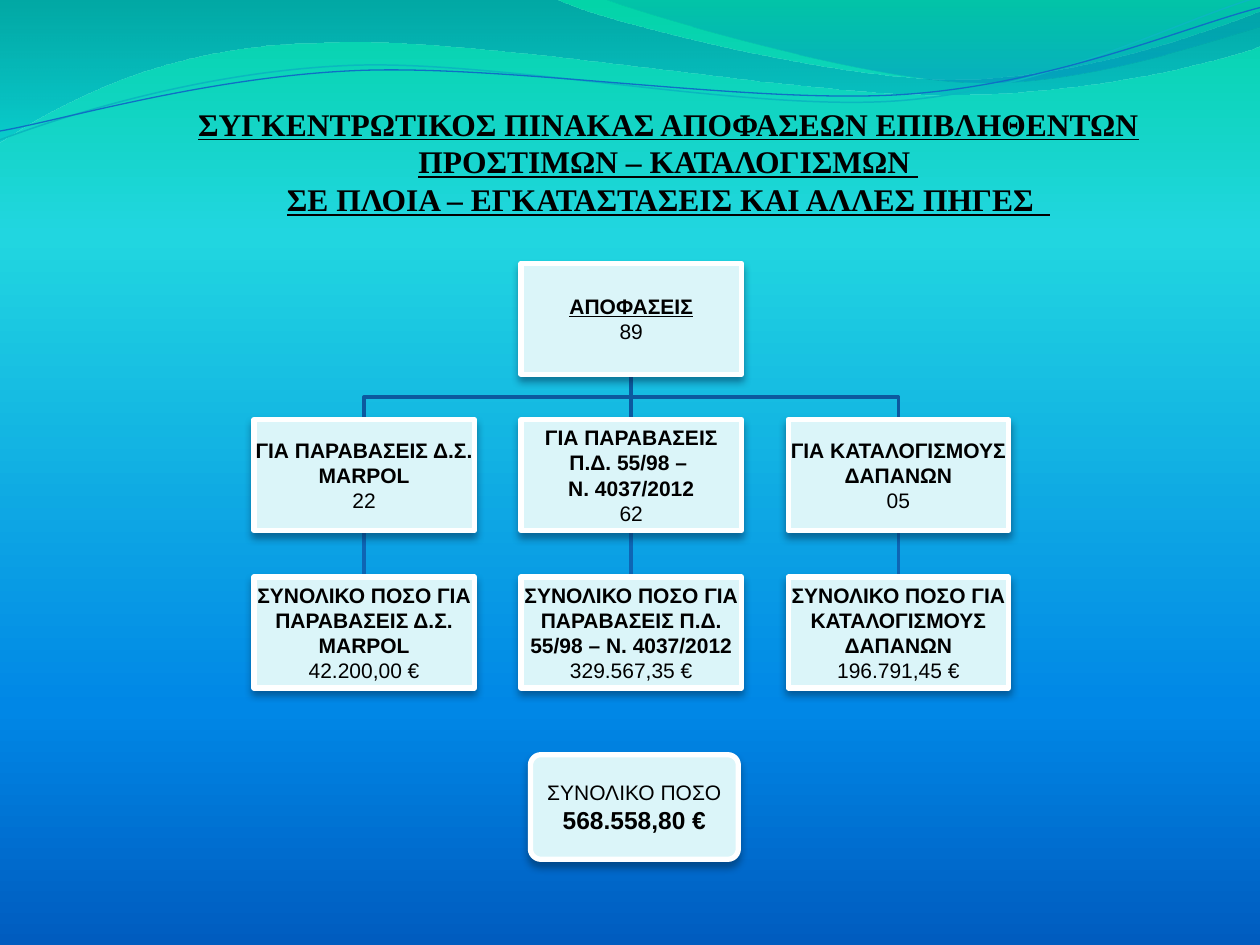
import math

from lxml import etree
from pptx import Presentation
from pptx.dml.color import RGBColor
from pptx.enum import shapes, text
from pptx.oxml.ns import qn
from pptx.util import Inches, Pt

BLACK = RGBColor(0x00, 0x00, 0x00)
WHITE = RGBColor(0xFF, 0xFF, 0xFF)
PALE = RGBColor(0xDB, 0xF5, 0xF9)
SHADOW = RGBColor(0x04, 0x27, 0x47)
BRANCH = RGBColor(0x0C, 0x59, 0x9F)
STEM = RGBColor(0x0E, 0x65, 0xB4)
TEAL = RGBColor(0x0A, 0xB8, 0xBF)
BLUE = RGBColor(0x0F, 0x6F, 0xC6)

# Gradient stops: position %, colour, opacity %
SKY = [(0, RGBColor(0x03, 0xD4, 0xA8), 100), (25, RGBColor(0x21, 0xD6, 0xE0), 100),
       (75, RGBColor(0x00, 0x87, 0xE6), 100), (100, RGBColor(0x00, 0x5C, 0xBF), 100)]
WIDE_FILL = [(0, RGBColor(0x00, 0x74, 0xA1), 45), (100, RGBColor(0x00, 0xC6, 0xCF), 55)]
CORNER_FILL = [(0, RGBColor(0x00, 0xA1, 0xA9), 30), (80, RGBColor(0x00, 0x8B, 0xBF), 45)]

# Outlines: a start point, then lines (x, y) or cubic curves (six numbers)
WIDE_BOX = (-0.01, -0.01, 10.02, 1.14)
WIDE_WAVE = [(0, -0.01), (4.4, -0.01), (4.76, 0.17, 6.64, 0.63, 7.58, 0.63),
             (8.53, 0.63, 9.58, 0.26, 10, 0.09), (10.01, 0.36),
             (9.83, 0.44, 8.7, 0.76, 7.46, 0.75), (6.22, 0.75, 3.82, 0.28, 2.57, 0.34),
             (1.29, 0.35, 0.46, 0.83, -0.01, 1.13), (0, -0.01)]
CORNER_BOX = (4.79, -0.01, 5.21, 0.7)
CORNER_WAVE = [(4.79, -0.01), (5.09, 0.11, 6.82, 0.62, 7.69, 0.65),
               (8.56, 0.69, 9.61, 0.32, 10, 0.21), (10, 0), (4.79, -0.01)]
TEAL_BOX = (-0.02, 0.22, 10.02, 0.71)
TEAL_LINE = [(0, 1.11), (0.48, 0.93, 1.58, 0.57, 2.77, 0.52),
             (3.95, 0.47, 5.93, 0.89, 7.13, 0.8), (8.33, 0.71, 9.38, 0.15, 9.98, -0.02)]
BLUE_BOX = (-0.02, 0.3, 10.03, 0.58)
BLUE_LINE = [(0, 1.04), (0.47, 0.96, 1.64, 0.61, 2.83, 0.56),
             (4.03, 0.51, 5.97, 0.83, 7.17, 0.75), (8.36, 0.67, 9.41, 0.21, 10, 0.06)]
TILT = 357.3

# Organisation chart grid
BOX_W, BOX_H = 1.75, 0.88
MID_X, COL_STEP = 5.01, 2.12
ROOT_Y, CHILD_Y, AMOUNT_Y = 2.09, 3.33, 4.58

TITLE = ("ΣΥΓΚΕΝΤΡΩΤΙΚΟΣ ΠΙΝΑΚΑΣ ΑΠΟΦΑΣΕΩΝ ΕΠΙΒΛΗΘΕΝΤΩΝ ΠΡΟΣΤΙΜΩΝ – ΚΑΤΑΛΟΓΙΣΜΩΝ \v"
         "ΣΕ ΠΛΟΙΑ – ΕΓΚΑΤΑΣΤΑΣΕΙΣ ΚΑΙ ΑΛΛΕΣ ΠΗΓΕΣ  ")
# Each column: the decisions box, then the amount box
COLUMNS = [
    (["ΓΙΑ ΠΑΡΑΒΑΣΕΙΣ Δ.Σ. MARPOL", "22"],
     ["ΣΥΝΟΛΙΚΟ ΠΟΣΟ ΓΙΑ ΠΑΡΑΒΑΣΕΙΣ Δ.Σ. MARPOL", "42.200,00 €"]),
    (["ΓΙΑ ΠΑΡΑΒΑΣΕΙΣ Π.Δ. 55/98 – ", "Ν. 4037/2012", "62"],
     ["ΣΥΝΟΛΙΚΟ ΠΟΣΟ ΓΙΑ ΠΑΡΑΒΑΣΕΙΣ Π.Δ. 55/98 – Ν. 4037/2012", "329.567,35 €"]),
    (["ΓΙΑ ΚΑΤΑΛΟΓΙΣΜΟΥΣ ΔΑΠΑΝΩΝ", "05"],
     ["ΣΥΝΟΛΙΚΟ ΠΟΣΟ ΓΙΑ ΚΑΤΑΛΟΓΙΣΜΟΥΣ ΔΑΠΑΝΩΝ", "196.791,45 €"]),
]


def add_color(parent, color, opacity):
    clr = etree.SubElement(parent, qn("a:srgbClr"), val=str(color))
    etree.SubElement(clr, qn("a:alpha"), val=str(opacity * 1000))


def set_gradient(fill, element, stops):
    """Top-to-bottom gradient with any number of stops."""
    fill.gradient()
    fill.gradient_angle = 270
    gs_list = element.find(".//" + qn("a:gsLst"))
    for gs in list(gs_list):
        gs_list.remove(gs)
    for pos, color, opacity in stops:
        gs = etree.SubElement(gs_list, qn("a:gs"), pos=str(pos * 1000))
        add_color(gs, color, opacity)


def add_outline(s, box, outline, rotation=0, close=False):
    """Freeform with frame `box`; the outline is given as it lies on the slide."""
    x, y, w, h = box
    fb = s.shapes.build_freeform(Inches(x), Inches(y))
    fb.add_line_segments([(Inches(x + w), Inches(y + h))], close=False)
    sp = fb.convert_to_shape()
    sp.shadow.inherit = False
    sp.rotation = rotation
    sin, cos = math.sin(math.radians(-rotation)), math.cos(math.radians(-rotation))
    # Swap the frame's diagonal for the real lines and curves
    outline_el = sp.element.find(".//" + qn("a:path"))
    for cmd in list(outline_el):
        outline_el.remove(cmd)
    for i, seg in enumerate(outline):
        tag = "a:moveTo" if i == 0 else "a:lnTo" if len(seg) == 2 else "a:cubicBezTo"
        cmd = etree.SubElement(outline_el, qn(tag))
        for px, py in zip(seg[::2], seg[1::2]):
            dx, dy = px - x - w / 2, py - y - h / 2
            etree.SubElement(cmd, qn("a:pt"),
                             x=str(int(Inches(w / 2 + dx * cos - dy * sin))),
                             y=str(int(Inches(h / 2 + dx * sin + dy * cos))))
    if close:
        etree.SubElement(outline_el, qn("a:close"))
    return sp


def add_wave(s, box, outline, stops):
    sp = add_outline(s, box, outline, close=True)
    set_gradient(sp.fill, sp.element, stops)
    sp.line.fill.background()


def add_curve(s, box, outline, color, width, rotation=0):
    sp = add_outline(s, box, outline, rotation)
    sp.fill.background()
    sp.line.color.rgb = color
    sp.line.width = Pt(width)


def add_stem(s, x, top, bottom, color):
    add_curve(s, (x - 0.05, top, 0.1, bottom - top), [(x, top), (x, bottom)], color, 2)


def add_branch(s, x, top, bottom):
    """Angled link from the middle column to the column centred on x."""
    bend = (top + bottom) / 2
    box = (min(x, MID_X), top, abs(x - MID_X), bottom - top)
    add_curve(s, box, [(MID_X, top), (MID_X, bend), (x, bend), (x, bottom)], BRANCH, 2)


def format_runs(p, size, font, bold, underline=False):
    p.alignment = text.PP_ALIGN.CENTER
    for r in p.runs:
        r.font.size, r.font.name = Pt(size), font
        r.font.bold, r.font.underline = bold, underline
        r.font.color.rgb = BLACK


def add_box(s, x, y, w, h, lines, kind=shapes.MSO_SHAPE.RECTANGLE):
    """White-edged card with a soft shadow; the last line is the plain value."""
    sp = s.shapes.add_shape(kind, Inches(x), Inches(y), Inches(w), Inches(h))
    sp.fill.solid()
    sp.fill.fore_color.rgb = PALE
    sp.line.color.rgb = WHITE
    sp.line.width = Pt(3)
    sp.shadow.inherit = False
    effects = sp.element.spPr.find(qn("a:effectLst"))
    shadow = etree.SubElement(effects, qn("a:outerShdw"), blurRad=str(Pt(4.5)),
                              dist=str(Pt(3)), dir="5400000", rotWithShape="0")
    add_color(shadow, SHADOW, 48)
    tf = sp.text_frame
    tf.word_wrap = True
    tf.vertical_anchor = text.MSO_ANCHOR.MIDDLE
    tf.margin_left = tf.margin_right = tf.margin_top = tf.margin_bottom = Inches(0.01)
    tf.text = "\n".join(lines)
    for p in tf.paragraphs:
        format_runs(p, 12, "Arial", bold=True)
    format_runs(tf.paragraphs[-1], 12, "Arial", bold=False)
    return sp


def add_title(s):
    sp = s.shapes.title
    sp.left, sp.top, sp.width, sp.height = map(Inches, (1.14, 0.78, 8.33, 0.95))
    tf = sp.text_frame
    tf.text = TITLE
    tf.word_wrap = True
    tf.auto_size = text.MSO_AUTO_SIZE.NONE
    tf.vertical_anchor = text.MSO_ANCHOR.BOTTOM
    tf.margin_left = tf.margin_right = tf.margin_bottom = 0
    format_runs(tf.paragraphs[0], 18, "Times New Roman", bold=True, underline=True)


def add_org_chart(s):
    centres = [MID_X + i * COL_STEP for i in (-1, 0, 1)]
    # Links, behind the boxes
    for x in reversed(centres):
        add_stem(s, x, CHILD_Y + BOX_H, AMOUNT_Y, STEM)
        if x == MID_X:
            add_stem(s, x, ROOT_Y + BOX_H, CHILD_Y, BRANCH)
        else:
            add_branch(s, x, ROOT_Y + BOX_H, CHILD_Y)
    # Boxes
    root = add_box(s, MID_X - BOX_W / 2, ROOT_Y, BOX_W, BOX_H, ["ΑΠΟΦΑΣΕΙΣ", "89"])
    root.text_frame.paragraphs[0].runs[0].font.underline = True
    for x, column in zip(centres, COLUMNS):
        for y, lines in zip((CHILD_Y, AMOUNT_Y), column):
            add_box(s, x - BOX_W / 2, y, BOX_W, BOX_H, lines)


def add_total(s):
    sp = add_box(s, 4.21, 5.99, 1.65, 0.83, ["ΣΥΝΟΛΙΚΟ ΠΟΣΟ", "568.558,80 €"],
                 shapes.MSO_SHAPE.ROUNDED_RECTANGLE)
    sp.adjustments[0] = 0.1
    label, value = sp.text_frame.paragraphs
    format_runs(label, 12, "Arial", bold=False)
    format_runs(value, 14, "Arial", bold=True)


def main():
    prs = Presentation()
    prs.slide_width, prs.slide_height = Inches(10), Inches(7.5)
    s = prs.slides.add_slide(prs.slide_layouts[5])
    # Background and waves
    set_gradient(s.background.fill, s.element, SKY)
    add_wave(s, WIDE_BOX, WIDE_WAVE, WIDE_FILL)
    add_wave(s, CORNER_BOX, CORNER_WAVE, CORNER_FILL)
    add_curve(s, TEAL_BOX, TEAL_LINE, TEAL, 0.85, TILT)
    add_curve(s, BLUE_BOX, BLUE_LINE, BLUE, 0.75, TILT)
    # Content
    add_title(s)
    add_org_chart(s)
    add_total(s)
    prs.save("out.pptx")


if __name__ == "__main__":
    main()
